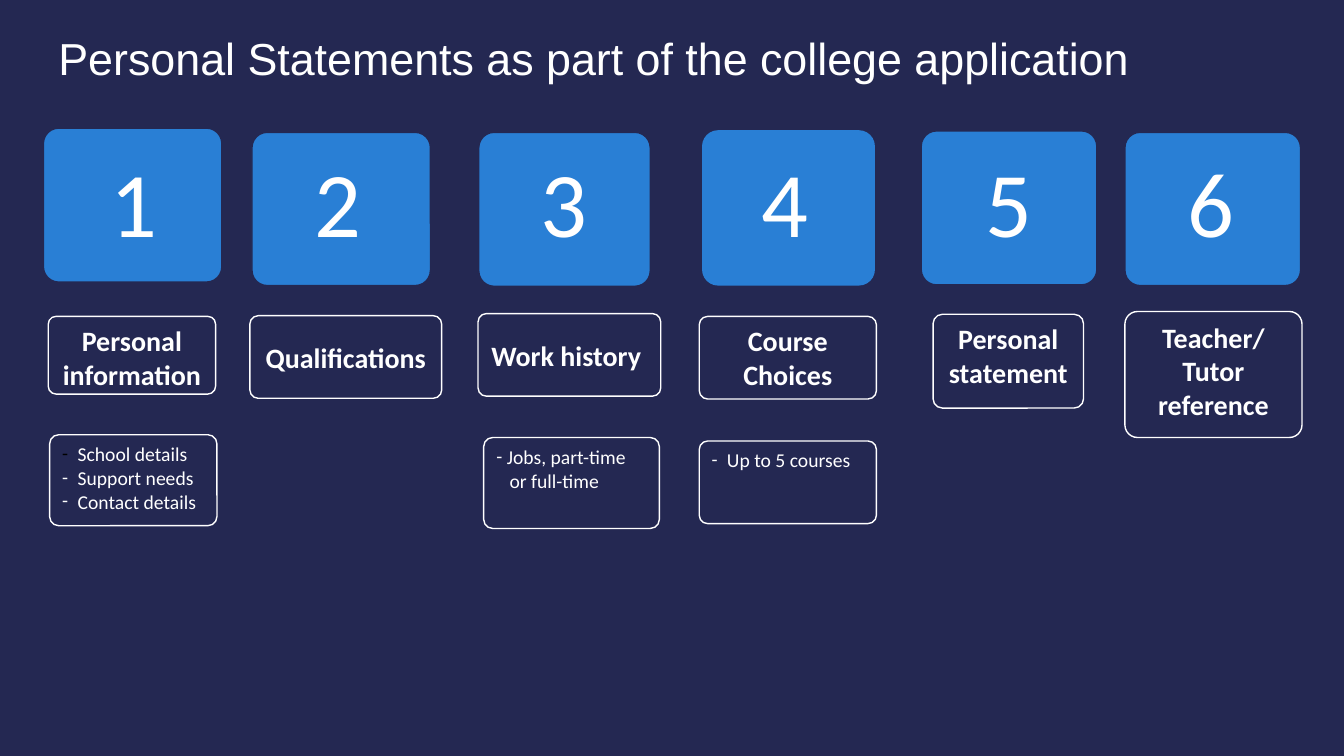
from pptx import Presentation
from pptx.dml.color import RGBColor
from pptx.enum import shapes, text
from pptx.oxml.ns import qn
from pptx.util import Pt
from lxml import etree

# Content: boxes are left, top, width, height in points
TITLE = "Personal Statements as part of the college application"
STEPS = [
    dict(card=(31, 91.5, 127.5, 110), digit=(96, 75),
         label=(34.5, 226, 119.5, 55.5), name=["Personal information"]),
    dict(card=(180, 94.5, 127.5, 109.5), digit=(241.5, 93),
         label=(178.5, 225.5, 137, 59), name=["Qualifications"], anchor="middle"),
    dict(card=(342, 94.5, 122.5, 110), digit=(403, 93),
         label=(341.5, 224, 130.5, 59), name=["Work history "], anchor="middle"),
    dict(card=(502, 93.5, 122.5, 110), digit=(560.5, 93), edge="blue",
         label=(499.5, 226, 126.5, 59), name=["Course Choices"]),
    dict(card=(658, 93.5, 125.5, 110), digit=(720.5, 93),
         label=(666.5, 224.5, 107.5, 67), name=["Personal statement"]),
    dict(card=(803.5, 94.5, 125.5, 109.5), digit=(865, 93),
         label=(803.5, 222.5, 126.5, 90), name=["Teacher/", "Tutor reference"]),
]
# Each detail line: words, left margin, dash colour (None for no dash)
DETAILS = [
    ((35.5, 310.5, 119.5, 65), [("School details", 11, "black"),
                                ("Support needs", 11, "white"),
                                ("Contact details", 11, "white")]),
    ((345.5, 312.5, 125.5, 65), [("Jobs, part-time", 7.5, "white"),
                                 ("or full-time", 9.5, None)]),
    ((499.5, 315, 126.5, 59), [("Up to 5 courses", 11, "white")]),
]
DIGIT_TOP, DIGIT_HEIGHT = 99.5, 87

THEME = dict(
    navy="242852", blue="297FD5", white="FFFFFF", black="000000",
    title=dict(name="Arial", size=Pt(32), bold=False),
    digit=dict(name="Calibri", size=Pt(66), bold=False),
    label=dict(name="Calibri", size=Pt(20), bold=True),
    detail=dict(name="Calibri", size=Pt(14), bold=False),
)
ANCHOR, ALIGN = text.MSO_ANCHOR, text.PP_ALIGN


def color(name):
    return RGBColor.from_string(THEME[name])


def write(sp, lines, style, align, anchor):
    tf = sp.text_frame
    frame = dict(word_wrap=True, auto_size=text.MSO_AUTO_SIZE.NONE,
                 vertical_anchor=anchor)
    for key, value in frame.items():
        setattr(tf, key, value)
    for i, line in enumerate(lines):
        p = tf.paragraphs[0] if i == 0 else tf.add_paragraph()
        p.alignment = align
        r = p.add_run()
        r.text = line
        for key, value in THEME[style].items():
            setattr(r.font, key, value)
        r.font.color.rgb = color("white")
    return tf


def rounded(s, box, fill, line):
    sp = s.shapes.add_shape(shapes.MSO_SHAPE.ROUNDED_RECTANGLE, *map(Pt, box))
    sp.adjustments[0] = 0.1
    sp.shadow.inherit = False
    sp.fill.solid()
    sp.fill.fore_color.rgb = color(fill)
    sp.line.color.rgb = color(line)
    sp.line.width = Pt(1)
    return sp


def indent(p, margin, dash):
    pPr = p._p.get_or_add_pPr()
    pPr.set("marL", str(Pt(margin)))
    pPr.set("indent", str(-Pt(margin) if dash else 0))
    if dash:
        clr = etree.SubElement(pPr, qn("a:buClr"))
        etree.SubElement(clr, qn("a:srgbClr"), val=THEME[dash])
        etree.SubElement(pPr, qn("a:buFont"), typeface="Calibri")
        etree.SubElement(pPr, qn("a:buChar"), char="-")


def main():
    prs = Presentation()
    prs.slide_width, prs.slide_height = Pt(960), Pt(540)
    s = prs.slides.add_slide(prs.slide_layouts[5])
    s.background.fill.solid()
    s.background.fill.fore_color.rgb = color("navy")

    # Title
    title = s.shapes.title
    place = dict(left=34.5, top=18, width=800, height=46)
    for key, value in place.items():
        setattr(title, key, Pt(value))
    write(title, [TITLE], "title", ALIGN.LEFT, ANCHOR.TOP)

    # Numbered cards and their labels
    for number, step in enumerate(STEPS, 1):
        rounded(s, step["card"], "blue", step.get("edge", "navy"))
        center, width = step["digit"]
        digit = s.shapes.add_textbox(Pt(center - width / 2), Pt(DIGIT_TOP),
                                     Pt(width), Pt(DIGIT_HEIGHT))
        write(digit, [str(number)], "digit", ALIGN.CENTER, ANCHOR.MIDDLE)
        label = rounded(s, step["label"], "navy", "white")
        anchor = ANCHOR.MIDDLE if step.get("anchor") else ANCHOR.TOP
        write(label, step["name"], "label", ALIGN.CENTER, anchor)

    # Detail boxes
    for box, lines in DETAILS:
        sp = rounded(s, box, "navy", "white")
        tf = write(sp, [line[0] for line in lines], "detail", ALIGN.LEFT, ANCHOR.TOP)
        for p, (_, margin, dash) in zip(tf.paragraphs, lines):
            indent(p, margin, dash)

    prs.save("out.pptx")


if __name__ == "__main__":
    main()
